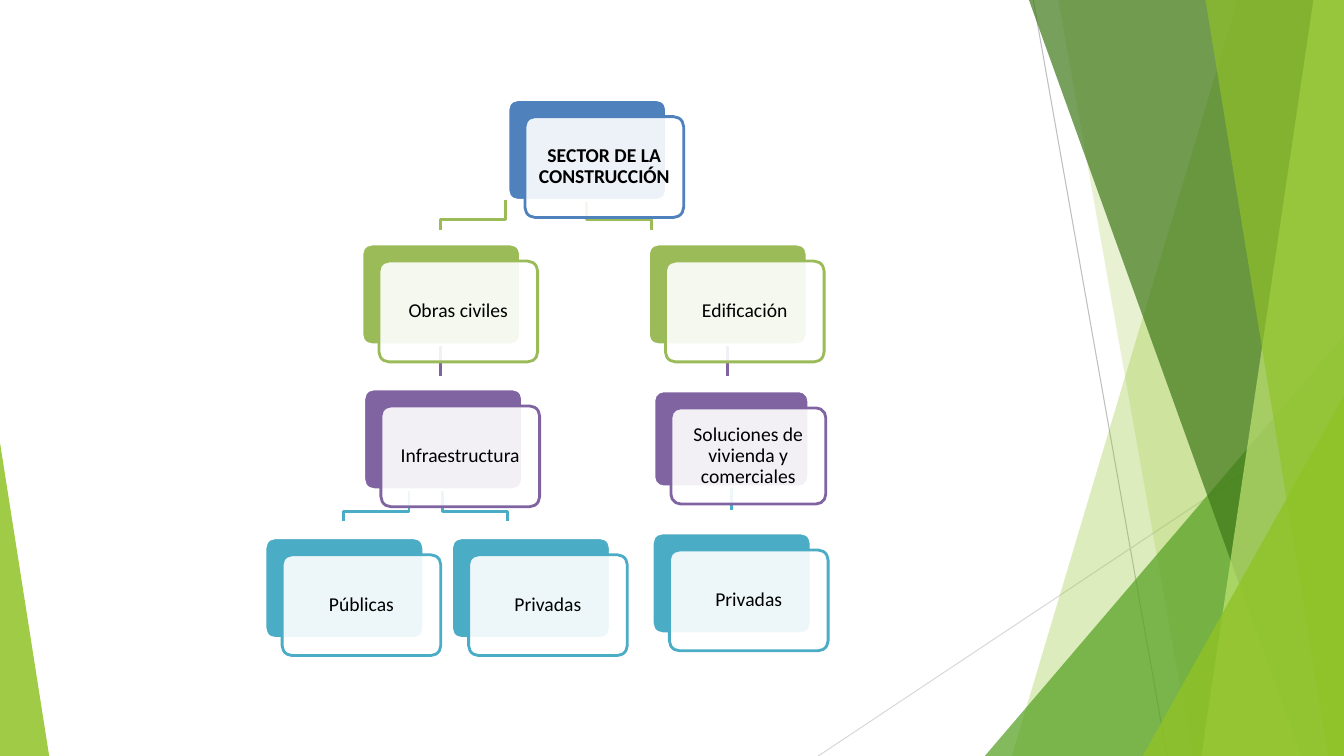
from lxml import etree
from pptx import Presentation
from pptx.dml.color import RGBColor
from pptx.enum.shapes import MSO_CONNECTOR, MSO_SHAPE
from pptx.enum.text import MSO_ANCHOR, PP_ALIGN
from pptx.oxml.ns import qn
from pptx.util import Cm, Pt

STRAIGHT = MSO_CONNECTOR.STRAIGHT
TRIANGLE = MSO_SHAPE.ISOSCELES_TRIANGLE
ROUNDED = MSO_SHAPE.ROUNDED_RECTANGLE
MIDDLE = MSO_ANCHOR.MIDDLE
CENTER = PP_ALIGN.CENTER

WIDTH, HEIGHT = 33.87, 19.05
BLUE, GREEN, PURPLE, TEAL = "4F81BD", "9BBB59", "8064A2", "4BACC6"
LIME = "90C226"


def paint(color_format, color, opacity=100):
    color_format.fore_color.rgb = RGBColor.from_string(color)
    if opacity < 100:
        solid = color_format.fore_color._xFill
        alpha = etree.SubElement(solid[0], qn("a:alpha"))
        alpha.set("val", str(opacity * 1000))


def add_line(x1, y1, x2, y2, color, points):
    line = page.shapes.add_connector(STRAIGHT, Cm(x1), Cm(y1), Cm(x2), Cm(y2))
    line.line.fill.solid()
    paint(line.line.fill, color)
    line.line.width = Pt(points)
    etree.SubElement(line._element.spPr, qn("a:effectLst"))


deck = Presentation()
deck.slide_width, deck.slide_height = Cm(WIDTH), Cm(HEIGHT)
page = deck.slides.add_slide(deck.slide_layouts[6])

add_line(26.04, 0, 29.41, HEIGHT, "BFBFBF", 0.75)
add_line(WIDTH, 10.24, 20.62, HEIGHT, "D9D9D9", 0.75)

panels = [
    (31.19, 25.5, WIDTH, 0, LIME, 30),
    (26.67, 30.05, WIDTH, 0, LIME, 20),
    (WIDTH, 24.82, WIDTH, 8.46, "54A021", 72),
    (25.93, 32.79, WIDTH, 0, "3F7819", 70),
    (33.1, 30.28, WIDTH, 0, "C0E474", 70),
    (30.38, 33.48, WIDTH, 0, LIME, 65),
    (WIDTH, 28.8, WIDTH, 9.98, LIME, 80),
    (0, 0, 1.24, 11.15, LIME, 85),
]
for top_x, bottom_x, right, top, color, opacity in panels:
    if top:
        panel = page.shapes.add_shape(
            TRIANGLE, Cm(bottom_x), Cm(top), Cm(right - bottom_x), Cm(HEIGHT - top))
        panel.adjustments[0] = 1 if top_x == right else 0
    else:
        outline = page.shapes.build_freeform(Cm(top_x), 0)
        outline.add_line_segments([
            (Cm(right), 0), (Cm(right), Cm(HEIGHT)), (Cm(bottom_x), Cm(HEIGHT))])
        panel = outline.convert_to_shape()
    panel.shadow.inherit = False
    panel.fill.solid()
    paint(panel.fill, color, opacity)
    panel.line.fill.background()

for x, top, bottom, color in [
    (18.44, 12.27, 12.85, TEAL),
    (18.34, 8.69, 9.47, PURPLE),
    (11.1, 8.69, 9.47, PURPLE),
]:
    add_line(x, top, x, bottom, color, 2)

for x1, y1, x2, y2, color in [
    (14.78, 5.05, 16.41, 5.79, GREEN),
    (12.75, 5.05, 11.1, 5.79, GREEN),
    (11.15, 12.34, 12.8, 13.13, TEAL),
    (10.31, 12.34, 8.66, 13.13, TEAL),
]:
    bend = y2 - 0.25
    outline = page.shapes.build_freeform(Cm(x1), Cm(y1))
    outline.add_line_segments(
        [(Cm(x1), Cm(bend)), (Cm(x2), Cm(bend)), (Cm(x2), Cm(y2))], close=False)
    branch = outline.convert_to_shape()
    branch.shadow.inherit = False
    branch.fill.background()
    branch.line.fill.solid()
    paint(branch.line.fill, color)
    branch.line.width = Pt(2)

cards = [
    ("SECTOR DE LA CONSTRUCCIÓN", 12.8, 2.51, 4, 2.54, BLUE),
    ("Obras civiles", 9.12, 6.15, 4, 2.54, GREEN),
    ("Infraestructura", 9.17, 9.8, 4, 2.54, PURPLE),
    ("Públicas", 6.68, 13.55, 4, 2.54, TEAL),
    ("Privadas", 11.38, 13.55, 4, 2.54, TEAL),
    ("Edificación", 16.34, 6.15, 4, 2.54, GREEN),
    ("Soluciones de vivienda y comerciales", 16.48, 9.85, 3.9, 2.42, PURPLE),
    ("Privadas", 16.44, 13.43, 4, 2.54, TEAL),
]
for label, left, top, width, height, color in cards:
    for shift, fill, opacity, edge in [(0, color, 100, "FFFFFF"), (0.43, "FFFFFF", 90, color)]:
        card = page.shapes.add_shape(
            ROUNDED, Cm(left + shift), Cm(top + shift), Cm(width), Cm(height))
        card.adjustments[0] = 0.1
        card.shadow.inherit = False
        card.fill.solid()
        paint(card.fill, fill, opacity)
        card.line.fill.solid()
        paint(card.line.fill, edge)
        card.line.width = Pt(2)
    frame = card.text_frame
    frame.word_wrap = True
    frame.vertical_anchor = MIDDLE
    frame.margin_left = frame.margin_right = Cm(0.15)
    frame.margin_top = frame.margin_bottom = Cm(0.15)
    para = frame.paragraphs[0]
    para.alignment = CENTER
    para.line_spacing = 0.9
    span = para.add_run()
    span.text = label
    span.font.name = "Calibri"
    span.font.size = Pt(14)
    span.font.bold = color == BLUE
    paint_target = span.font.fill
    paint_target.solid()
    paint(paint_target, "000000")

deck.save("out.pptx")
